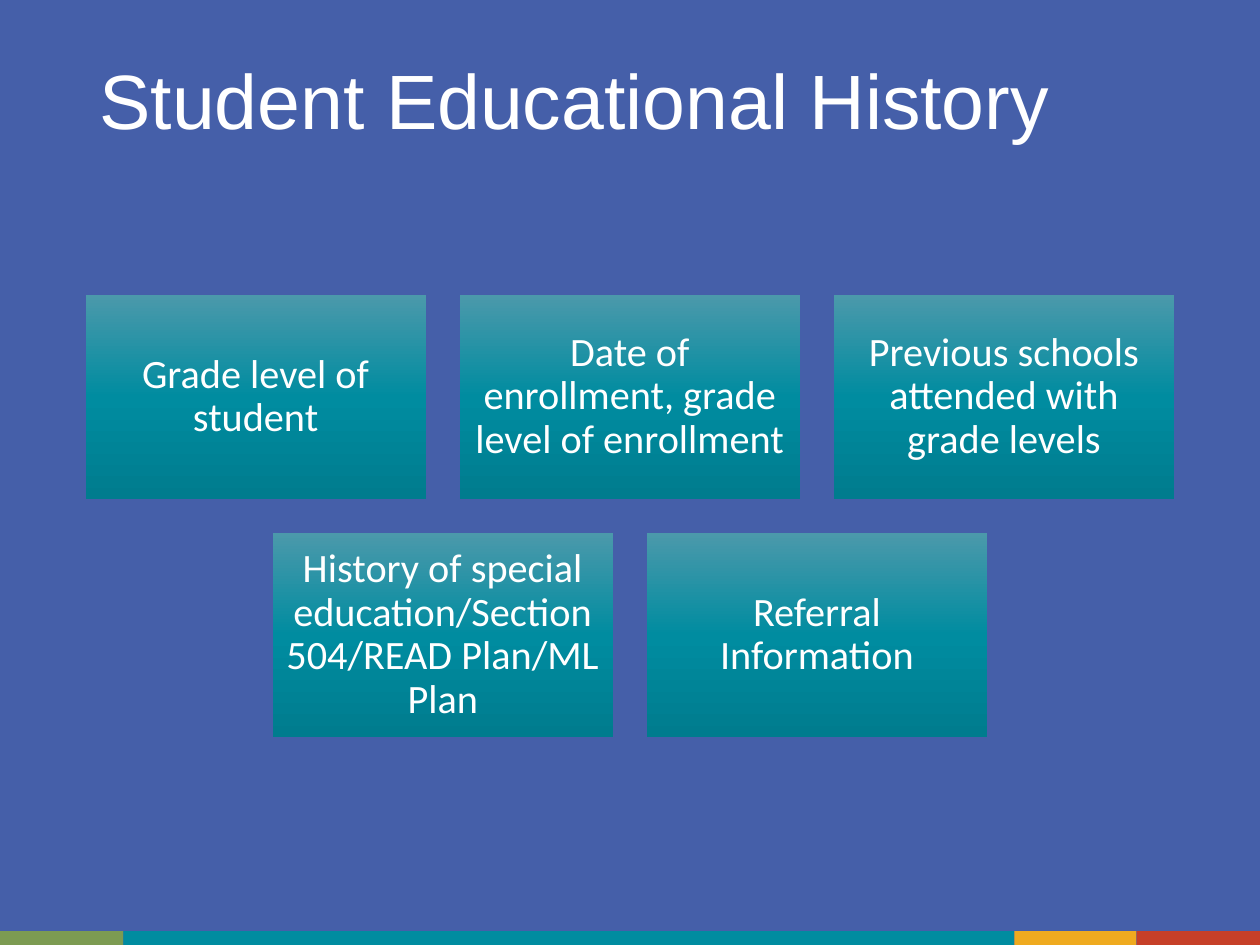
"""Build the Student Educational History slide."""
from copy import deepcopy

from pptx import Presentation
from pptx.dml.color import RGBColor
from pptx.enum.shapes import MSO_SHAPE
from pptx.enum.text import MSO_ANCHOR, PP_ALIGN
from pptx.util import Inches, Pt

TITLE = "Student Educational History"
CARD_ROWS = [
    [
        "Grade level of student",
        "Date of enrollment, grade level of enrollment",
        "Previous schools attended with grade levels",
    ],
    [
        "History of special education/Section 504/READ Plan/ML Plan",
        "Referral Information",
    ],
]
FOOTER_BANDS = [("7C9B52", 0.98), ("008CA0", 7.07), ("EFAA1F", 0.97), ("C63F28", 0.98)]

THEME = {
    "background": "455FA9",
    "text": "FFFFFF",
    "card_gradient": [(0, "4B99AB"), (0.5, "008CA0"), (1, "007C8E")],
    "title_font": "Arial",
    "title_size": 44,
    "card_font": "Calibri",
    "card_size": 23,
}
SLIDE_WIDTH, SLIDE_HEIGHT = 10, 7.5
CARD_WIDTH, CARD_HEIGHT, CARD_GAP, CARDS_TOP = 2.7, 1.62, 0.27, 2.34
FOOTER_HEIGHT = 0.11


def color(name):
    return RGBColor.from_string(name)


def add_rectangle(slide, left, top, width, height):
    shape = slide.shapes.add_shape(
        MSO_SHAPE.RECTANGLE, Inches(left), Inches(top), Inches(width), Inches(height)
    )
    shape.shadow.inherit = False
    shape.line.fill.background()
    return shape


def write_text(text_frame, text, font_name, size, alignment):
    text_frame.word_wrap = True
    text_frame.vertical_anchor = MSO_ANCHOR.MIDDLE
    paragraph = text_frame.paragraphs[0]
    paragraph.alignment = alignment
    paragraph.line_spacing = 0.9
    run = paragraph.add_run()
    run.text = text
    run.font.name = font_name
    run.font.size = Pt(size)
    run.font.color.rgb = color(THEME["text"])


def fill_gradient(shape, gradient):
    shape.fill.gradient()
    shape.fill.gradient_angle = 270
    stop_list = shape.fill._fill._gradFill.gsLst
    stop_list.insert(1, deepcopy(stop_list[0]))
    for stop, (position, name) in zip(shape.fill.gradient_stops, gradient):
        stop.position = position
        stop.color.rgb = color(name)


def add_footer(slide):
    left = 0
    for name, width in FOOTER_BANDS:
        band = add_rectangle(slide, left, SLIDE_HEIGHT - FOOTER_HEIGHT, width, FOOTER_HEIGHT)
        band.fill.solid()
        band.fill.fore_color.rgb = color(name)
        left += width


def add_title(slide):
    title = slide.shapes.title
    title.left, title.top = Inches(0.69), Inches(0.4)
    title.width, title.height = Inches(8.62), Inches(0.86)
    write_text(title.text_frame, TITLE, THEME["title_font"], THEME["title_size"], PP_ALIGN.LEFT)


def add_cards(slide):
    for row, labels in enumerate(CARD_ROWS):
        row_width = len(labels) * (CARD_WIDTH + CARD_GAP) - CARD_GAP
        row_left = (SLIDE_WIDTH - row_width) / 2
        top = CARDS_TOP + row * (CARD_HEIGHT + CARD_GAP)
        for column, label in enumerate(labels):
            left = row_left + column * (CARD_WIDTH + CARD_GAP)
            card = add_rectangle(slide, left, top, CARD_WIDTH, CARD_HEIGHT)
            fill_gradient(card, THEME["card_gradient"])
            frame = card.text_frame
            frame.margin_left = frame.margin_right = Inches(0.1)
            frame.margin_top = frame.margin_bottom = Inches(0.1)
            write_text(frame, label, THEME["card_font"], THEME["card_size"], PP_ALIGN.CENTER)


def main():
    presentation = Presentation()
    presentation.slide_width = Inches(SLIDE_WIDTH)
    presentation.slide_height = Inches(SLIDE_HEIGHT)
    slide = presentation.slides.add_slide(presentation.slide_layouts[5])
    slide.background.fill.solid()
    slide.background.fill.fore_color.rgb = color(THEME["background"])
    add_footer(slide)
    add_title(slide)
    add_cards(slide)
    presentation.save("out.pptx")


if __name__ == "__main__":
    main()
